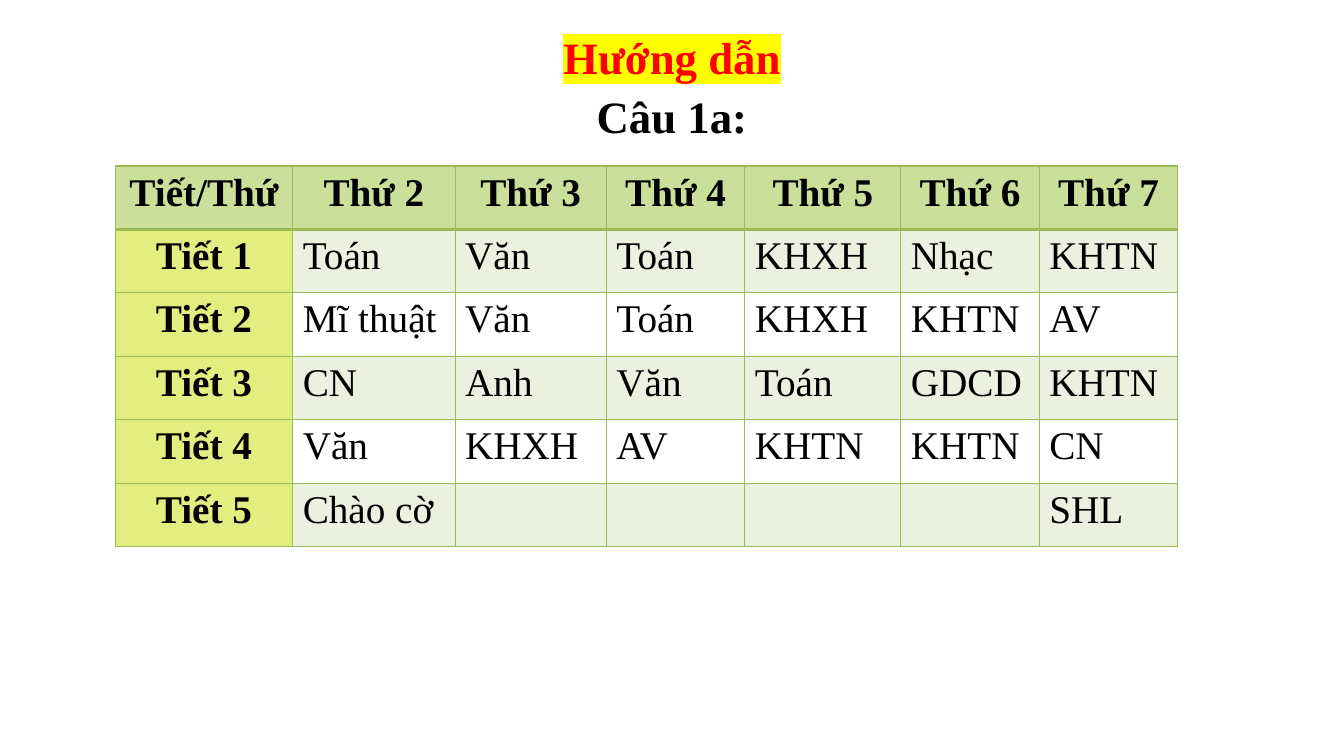
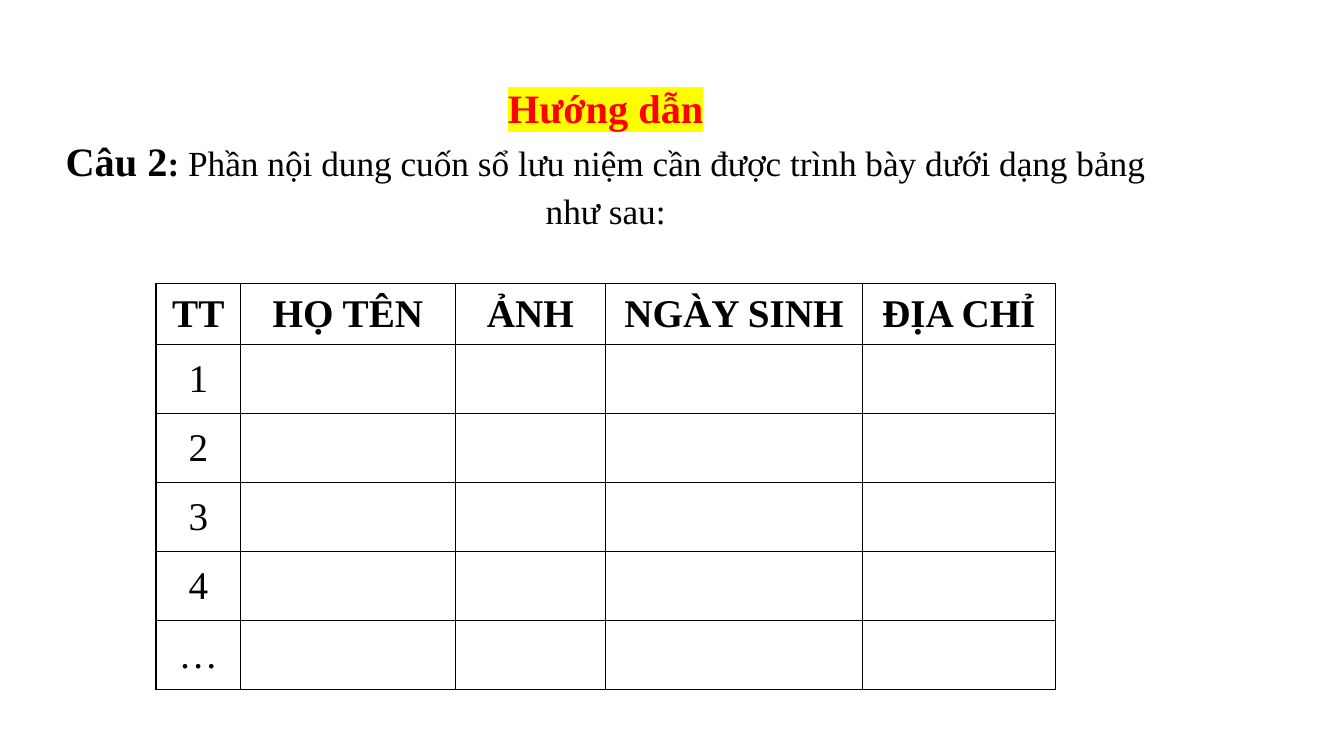
from lxml.etree import SubElement
from pptx import Presentation
from pptx.dml.color import RGBColor
from pptx.enum.text import MSO_ANCHOR, MSO_AUTO_SIZE, PP_ALIGN
from pptx.oxml.ns import qn
from pptx.util import Pt

BLACK = RGBColor(0x00, 0x00, 0x00)
RED = RGBColor(0xFF, 0x00, 0x00)
YELLOW = RGBColor(0xFF, 0xFF, 0x00)
GREEN = RGBColor(0x9B, 0xBB, 0x59)
HEADER_GREEN = RGBColor(0xCA, 0xE0, 0x9A)
PERIOD_LIME = RGBColor(0xE2, 0xEE, 0x80)
BAND_GREEN = RGBColor(0xEB, 0xF1, 0xDE)

TIMETABLE = [
    ["Tiết/Thứ", "Thứ 2", "Thứ 3", "Thứ 4", "Thứ 5", "Thứ 6", "Thứ 7"],
    ["Tiết 1", "Toán", "Văn", "Toán", "KHXH", "Nhạc", "KHTN"],
    ["Tiết 2", "Mĩ thuật", "Văn", "Toán", "KHXH", "KHTN", "AV"],
    ["Tiết 3", "CN", "Anh", "Văn", "Toán", "GDCD", "KHTN"],
    ["Tiết 4", "Văn", "KHXH", "AV", "KHTN", "KHTN", "CN"],
    ["Tiết 5", "Chào cờ", "", "", "", "", "SHL"],
]
YEARBOOK = [["TT", "HỌ TÊN", "ẢNH", "NGÀY SINH", "ĐỊA CHỈ"]] + [
    [number, "", "", "", ""] for number in ("1", "2", "3", "4", "…")
]


def timetable_fill(row, column):
    if row == 0:
        return HEADER_GREEN
    if column == 0:
        return PERIOD_LIME
    return BAND_GREEN if row % 2 else None


class GuideDeck:
    """Holds the shared style and the slide being built."""

    font_name = "Times New Roman"
    heading = "Hướng dẫn"
    table_size = 28
    line_spacing = 1.1

    def __init__(self):
        self.deck = Presentation()
        self.deck.slide_width, self.deck.slide_height = Pt(960), Pt(540)
        self.page = None

    def add_page(self):
        self.page = self.deck.slides.add_slide(self.deck.slide_layouts[5])

    def style(self, span, size, bold=True, color=BLACK, highlight=None):
        font = span.font
        font.size, font.bold = Pt(size), bold
        font.color.rgb = color
        if highlight is not None:
            mark = SubElement(span._r.get_or_add_rPr(), qn("a:highlight"))
            SubElement(mark, qn("a:srgbClr"), val=str(highlight))
        font.name = self.font_name

    def title(self, left, top, width, height, heading_size, question):
        """Write the heading, then the question as (text, size, bold) spans."""
        box = self.page.shapes.title
        box.left, box.top, box.width, box.height = map(Pt, (left, top, width, height))
        frame = box.text_frame
        frame.auto_size = MSO_AUTO_SIZE.NONE
        frame.vertical_anchor = MSO_ANCHOR.MIDDLE
        frame.text = self.heading
        self.style(frame.paragraphs[0].runs[0], heading_size, color=RED, highlight=YELLOW)
        para = frame.add_paragraph()
        for text, size, bold in question:
            span = para.add_run()
            span.text = text
            self.style(span, size, bold)
        for para in frame.paragraphs:
            para.alignment = PP_ALIGN.CENTER
            para.line_spacing = self.line_spacing

    def borders(self, cell, color, top, bottom):
        properties = cell._tc.get_or_add_tcPr()
        for side, width in (("L", 1), ("R", 1), ("T", top), ("B", bottom)):
            line = SubElement(properties, qn(f"a:ln{side}"), w=str(Pt(width)))
            fill = SubElement(line, qn("a:solidFill"))
            SubElement(fill, qn("a:srgbClr"), val=str(color))

    def table(self, left, top, widths, heights, rows, line_color, header_rule=1,
              fill_rule=None, bold_first_column=False, compact=False):
        """Draw a grid; fill_rule(row, column) gives a colour or None."""
        table = self.page.shapes.add_table(
            len(rows), len(widths), Pt(left), Pt(top), Pt(sum(widths)), Pt(sum(heights))
        ).table
        table.first_row = table.horz_banding = False
        for column, width in zip(table.columns, widths):
            column.width = Pt(width)
        for row, height in zip(table.rows, heights):
            row.height = Pt(height)
        for row, texts in enumerate(rows):
            for column, text in enumerate(texts):
                cell = table.cell(row, column)
                self.borders(cell, line_color,
                             top=header_rule if row == 1 else 1,
                             bottom=header_rule if row == 0 else 1)
                color = fill_rule(row, column) if fill_rule else None
                if color is None:
                    cell.fill.background()
                else:
                    cell.fill.solid()
                    cell.fill.fore_color.rgb = color
                if compact:
                    cell.vertical_anchor = MSO_ANCHOR.MIDDLE
                    cell.margin_left = cell.margin_right = Pt(5)
                    cell.margin_top = cell.margin_bottom = 0
                if not text:
                    continue
                cell.text_frame.text = text
                para = cell.text_frame.paragraphs[0]
                if row == 0 or column == 0:
                    para.alignment = PP_ALIGN.CENTER
                bold = row == 0 or (bold_first_column and column == 0)
                self.style(para.runs[0], self.table_size, bold)

    def save(self):
        self.deck.save("out.pptx")


def main():
    guide = GuideDeck()

    guide.add_page()
    guide.title(48, 14.4, 864, 90, 32, [("Câu 1a:", 32, True)])
    guide.table(82.3, 118.6, [126.8, 116, 108, 99, 111.4, 98.9, 99], [45.3] * 6,
                TIMETABLE, GREEN, header_rule=2, fill_rule=timetable_fill,
                bold_first_column=True)

    guide.add_page()
    guide.title(36, 65.5, 793.4, 90, 28.8, [
        ("Câu 2", 28.8, True),
        (":", 25.2, True),
        (" Phần nội dung cuốn sổ lưu niệm cần được trình bày dưới dạng bảng như sau:",
         25.2, False),
    ])
    guide.table(111.5, 202.5, [60.3, 153.5, 107.2, 183.6, 137.6], [43.6] + [49.25] * 5,
                YEARBOOK, BLACK, compact=True)

    guide.save()


if __name__ == "__main__":
    main()
